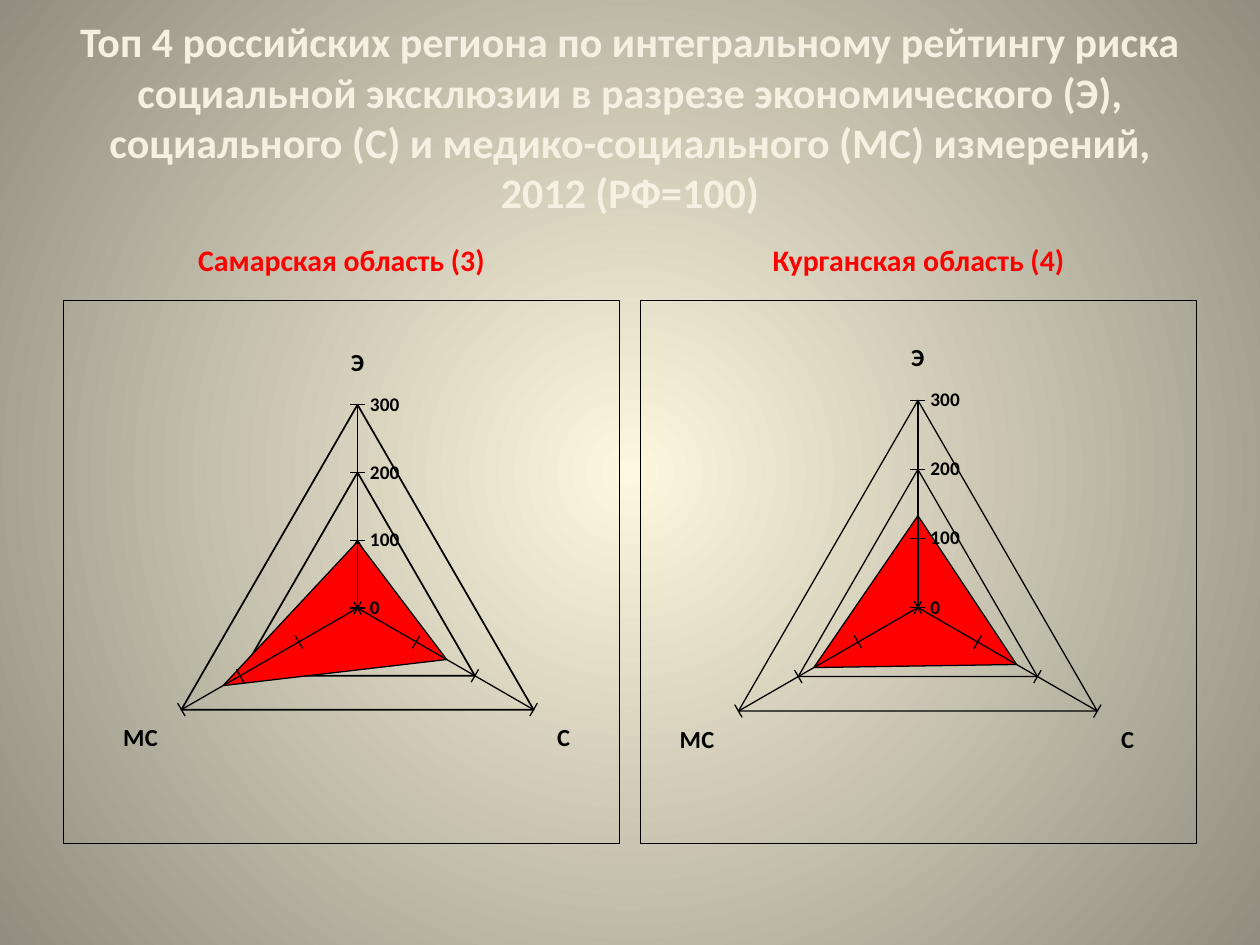
from lxml import etree
from pptx import Presentation
from pptx.chart.data import CategoryChartData
from pptx.dml.color import RGBColor
from pptx.enum.chart import XL_CHART_TYPE, XL_TICK_MARK
from pptx.enum.text import MSO_ANCHOR, PP_ALIGN
from pptx.oxml import parse_xml
from pptx.oxml.ns import nsdecls, qn
from pptx.util import Inches, Pt

RADAR = XL_CHART_TYPE.RADAR_FILLED
OUTSIDE, CROSS = XL_TICK_MARK.OUTSIDE, XL_TICK_MARK.CROSS
MIDDLE, BOTTOM = MSO_ANCHOR.MIDDLE, MSO_ANCHOR.BOTTOM
CENTER = PP_ALIGN.CENTER

# Content
FONT = "Calibri"
COLORS = {"glow": "FCF7DD", "edge": "918E81", "title": "F4F1E3",
          "risk": "FF0000", "line": "000000"}
TITLE = ("Топ 4 российских региона по интегральному рейтингу риска социальной "
         "эксклюзии в разрезе экономического (Э), социального (С) и "
         "медико-социального (МС) измерений, 2012 (РФ=100)")
DIMENSIONS = ["Э", "С", "МС"]
REGIONS = [
    {"name": "Самарская область (3)", "values": (98, 152, 229),
     "plot": (0.163, 0.192, 0.732, 0.749), "tick": OUTSIDE, "grid": 1},
    {"name": "Курганская область (4)", "values": (133, 165, 174),
     "plot": (0.126, 0.184, 0.746, 0.763), "tick": CROSS, "grid": 0.75},
]

# Layout in inches
MARGIN, COLUMN_W, COLUMN_STEP = 0.5, 4.42, 4.58
HEADING_TOP, HEADING_H = 1.55, 0.7
CHART_TOP, CHART_H = 2.38, 4.32


def color(name):
    return RGBColor.from_string(COLORS[name])


def set_font(font, size, name, bold=True):
    font.name, font.size, font.bold = FONT, Pt(size), bold
    font.color.rgb = color(name)


def set_line(line, width):
    line.color.rgb = color("line")
    line.width = Pt(width)


def add_text(slide, box, text, size, name, anchor):
    tf = slide.shapes.add_textbox(*map(Inches, box)).text_frame
    tf.word_wrap = True
    tf.vertical_anchor = anchor
    p = tf.paragraphs[0]
    p.alignment = CENTER
    r = p.add_run()
    r.text = text
    set_font(r.font, size, name)


def set_background(slide):
    fill = slide.background.fill
    fill.gradient()
    for stop, name in zip(fill.gradient_stops, ("glow", "edge")):
        stop.color.rgb = color(name)
    for stop, position in zip(fill.gradient_stops, (0, 1)):
        stop.position = position
    # Turn the linear gradient into a circular one
    grad = next(slide.element.iter(qn("a:gradFill")))
    grad.remove(grad.find(qn("a:lin")))
    circle = etree.SubElement(grad, qn("a:path"), {"path": "circle"})
    etree.SubElement(circle, qn("a:fillToRect"), dict.fromkeys("ltrb", "50000"))


def place_plot(chart, box):
    area = next(chart.element.iter(qn("c:plotArea")))
    for old in area.findall(qn("c:layout")):
        area.remove(old)
    layout = etree.Element(qn("c:layout"))
    area.insert(0, layout)
    manual = etree.SubElement(layout, qn("c:manualLayout"))
    settings = [("layoutTarget", "inner"), ("xMode", "edge"), ("yMode", "edge")]
    for tag, value in settings + list(zip("xywh", box)):
        etree.SubElement(manual, qn("c:" + tag), val=str(value))


def add_border(chart):
    border = parse_xml(
        f'<c:spPr {nsdecls("c", "a")}><a:noFill/><a:ln w="{Pt(0.75)}"><a:solidFill>'
        f'<a:srgbClr val="{COLORS["line"]}"/></a:solidFill></a:ln></c:spPr>')
    chart.element.find(qn("c:txPr")).addprevious(border)


def add_radar(slide, left, region):
    data = CategoryChartData(number_format="0")
    data.categories = DIMENSIONS
    data.add_series("Series 1", region["values"])
    box = map(Inches, (left, CHART_TOP, COLUMN_W, CHART_H))
    chart = slide.shapes.add_chart(RADAR, *box, data).chart
    chart.has_title = chart.has_legend = False
    set_font(chart.font, 10, "line", bold=False)
    add_border(chart)
    place_plot(chart, region["plot"])

    # Axes
    axes = ((chart.category_axis, 14, OUTSIDE), (chart.value_axis, 11, region["tick"]))
    for axis, size, tick in axes:
        axis.major_tick_mark = tick
        axis.has_major_gridlines = True
        set_font(axis.tick_labels.font, size, "line")
        set_line(axis.format.line, 0.75)
        set_line(axis.major_gridlines.format.line, region["grid"])
    scale = chart.value_axis
    scale.minimum_scale, scale.maximum_scale, scale.major_unit = 0, 300, 100
    scale.tick_labels.number_format = "0"
    scale.tick_labels.number_format_is_linked = False

    # Filled area
    plot = chart.plots[0]
    plot.vary_by_categories = False
    area = plot.series[0].format
    area.fill.solid()
    area.fill.fore_color.rgb = color("risk")
    set_line(area.line, 0.75)


def main():
    prs = Presentation()
    prs.slide_width, prs.slide_height = Inches(10), Inches(7.5)
    slide = prs.slides.add_slide(prs.slide_layouts[6])
    set_background(slide)
    add_text(slide, (MARGIN, 0.3, 9, 1.25), TITLE, 24, "title", MIDDLE)

    # One column per region
    for i, region in enumerate(REGIONS):
        left = MARGIN + i * COLUMN_STEP
        add_text(slide, (left, HEADING_TOP, COLUMN_W, HEADING_H),
                 region["name"], 17, "risk", BOTTOM)
        add_radar(slide, left, region)
    prs.save("out.pptx")


if __name__ == "__main__":
    main()
